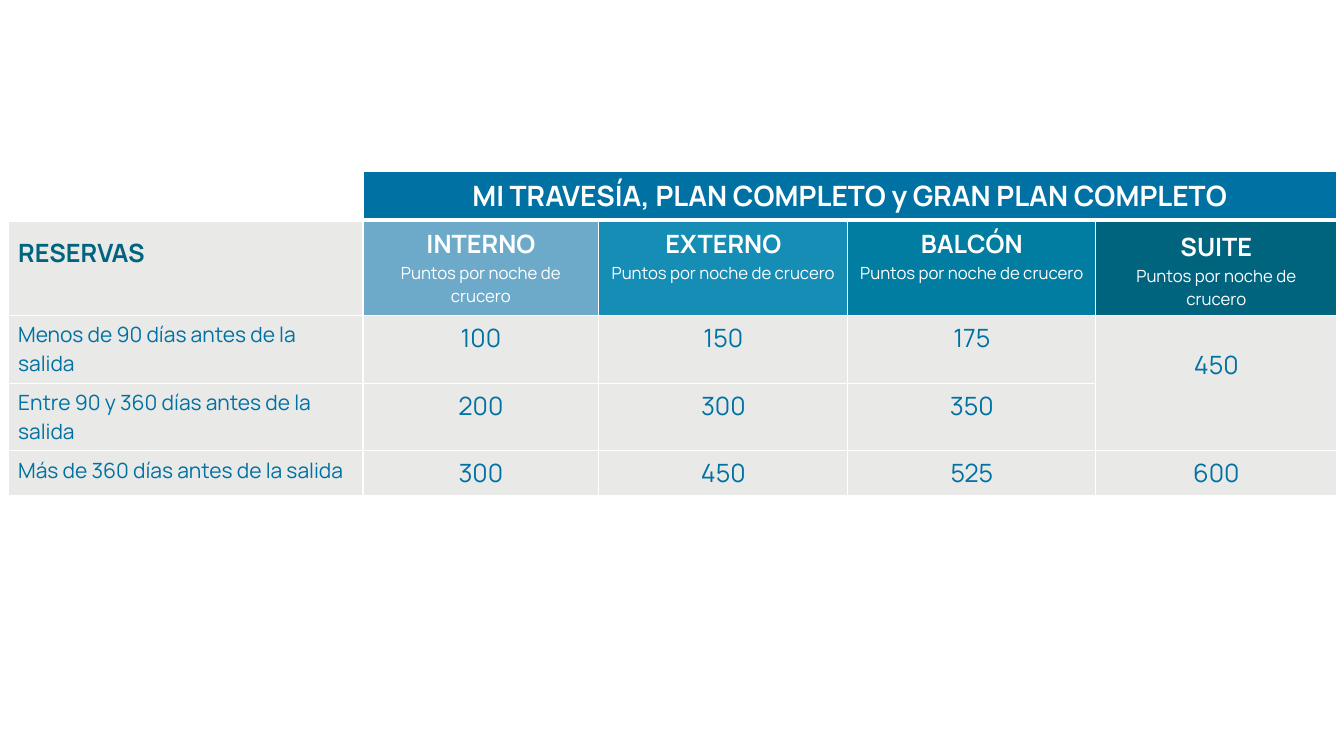
from dataclasses import dataclass

from lxml.etree import SubElement
from pptx import Presentation
from pptx.dml.color import RGBColor as Color
from pptx.enum.text import PP_ALIGN as Align
from pptx.oxml.ns import qn
from pptx.util import Inches, Pt


@dataclass(frozen=True)
class Theme:
    """Colours, font and type sizes of the slide."""
    font: str = "Manrope"
    white: str = "FFFFFF"
    blue: str = "0071A3"
    teal: str = "00647F"
    grey: str = "E9EAE8"
    title: int = 20
    heading: int = 18
    label: int = 15
    note: int = 12
    line: int = 1
    heavy_line: int = 3


THEME = Theme()
COLUMN_WIDTHS = (3.52, 2.34, 2.47, 2.46, 2.39)
ROW_HEIGHTS = (0.47, 0.95, 0.67, 0.67, 0.44)
TITLE = "MI TRAVESÍA, PLAN COMPLETO y GRAN PLAN COMPLETO"
UNIT = "Puntos por noche de crucero"
CABINS = (
    ("INTERNO", "6DAAC9", 0.07),
    ("EXTERNO", "158DB4", 0.07),
    ("BALCÓN", "007DA0", 0.07),
    ("SUITE", THEME.teal, 0.1),
)
BOOKINGS = (
    ("Menos de 90 días antes de la salida", ("100", "150", "175", "450")),
    ("Entre 90 y 360 días antes de la salida", ("200", "300", "350")),
    ("Más de 360 días antes de la salida", ("300", "450", "525", "600")),
)


def add_table(page):
    """Add the empty table with its column widths and row heights."""
    frame = page.shapes.add_table(
        len(ROW_HEIGHTS), len(COLUMN_WIDTHS), Inches(0.08), Inches(1.7),
        Inches(sum(COLUMN_WIDTHS)), Inches(sum(ROW_HEIGHTS)))
    table = frame.table
    table.first_row = table.horz_banding = False
    for column, width in zip(table.columns, COLUMN_WIDTHS):
        column.width = Inches(width)
    for row, height in zip(table.rows, ROW_HEIGHTS):
        row.height = Inches(height)
    return table


def set_border(cell, side, points):
    """Draw one white side of a cell."""
    properties = cell._tc.get_or_add_tcPr()
    line = SubElement(properties, qn(f"a:ln{side}"), w=str(Pt(points)))
    fill = SubElement(line, qn("a:solidFill"))
    SubElement(fill, qn("a:srgbClr"), val=THEME.white)


def style_grid(table):
    """Give every cell its borders and the grey base fill."""
    for index, row in enumerate(table.rows):
        for cell in row.cells:
            for side in "LRTB":
                heavy = (index, side) in ((0, "B"), (1, "T"))
                set_border(cell, side, THEME.heavy_line if heavy else THEME.line)
            paint(cell, THEME.grey)
    table.cell(0, 0).fill.background()


def paint(cell, colour):
    """Fill a cell with a solid colour."""
    cell.fill.solid()
    cell.fill.fore_color.rgb = Color.from_string(colour)


def write(cell, lines, colour, align=Align.CENTER, top=0.05):
    """Write lines of (text, size, bold) into a cell."""
    cell.margin_top = Inches(top)
    cell.text_frame.text = "\n".join(text for text, _, _ in lines)
    for para, (_, size, bold) in zip(cell.text_frame.paragraphs, lines):
        para.alignment = align
        for span in para.runs:
            span.font.name = THEME.font
            span.font.size = Pt(size)
            span.font.bold = bold
            span.font.color.rgb = Color.from_string(colour)


def fill_headings(table):
    """Write the title band and the cabin headings."""
    band = table.cell(0, 1)
    band.merge(table.cell(0, 4))
    paint(band, THEME.blue)
    write(band, [(TITLE, THEME.title, True)], THEME.white)
    write(table.cell(1, 0), [("RESERVAS", THEME.heading, True)],
          THEME.teal, Align.LEFT, 0.16)
    for column, (cabin, colour, top) in enumerate(CABINS, 1):
        cell = table.cell(1, column)
        paint(cell, colour)
        write(cell, [(cabin, THEME.heading, True), (UNIT, THEME.note, False)],
              THEME.white, top=top)


def fill_points(table):
    """Write the booking periods and their points."""
    shared = table.cell(2, 4)
    shared.merge(table.cell(3, 4))
    for row, (period, points) in enumerate(BOOKINGS, 2):
        write(table.cell(row, 0), [(period, THEME.label, False)],
              THEME.blue, Align.LEFT)
        for column, value in enumerate(points, 1):
            cell = table.cell(row, column)
            write(cell, [(value, THEME.heading, False)], THEME.blue,
                  top=0.32 if cell.is_merge_origin else 0.05)


def main():
    """Build and save the slide."""
    deck = Presentation()
    deck.slide_width, deck.slide_height = Inches(13.33), Inches(7.5)
    page = deck.slides.add_slide(deck.slide_layouts[6])
    table = add_table(page)
    style_grid(table)
    fill_headings(table)
    fill_points(table)
    deck.save("out.pptx")


if __name__ == "__main__":
    main()
